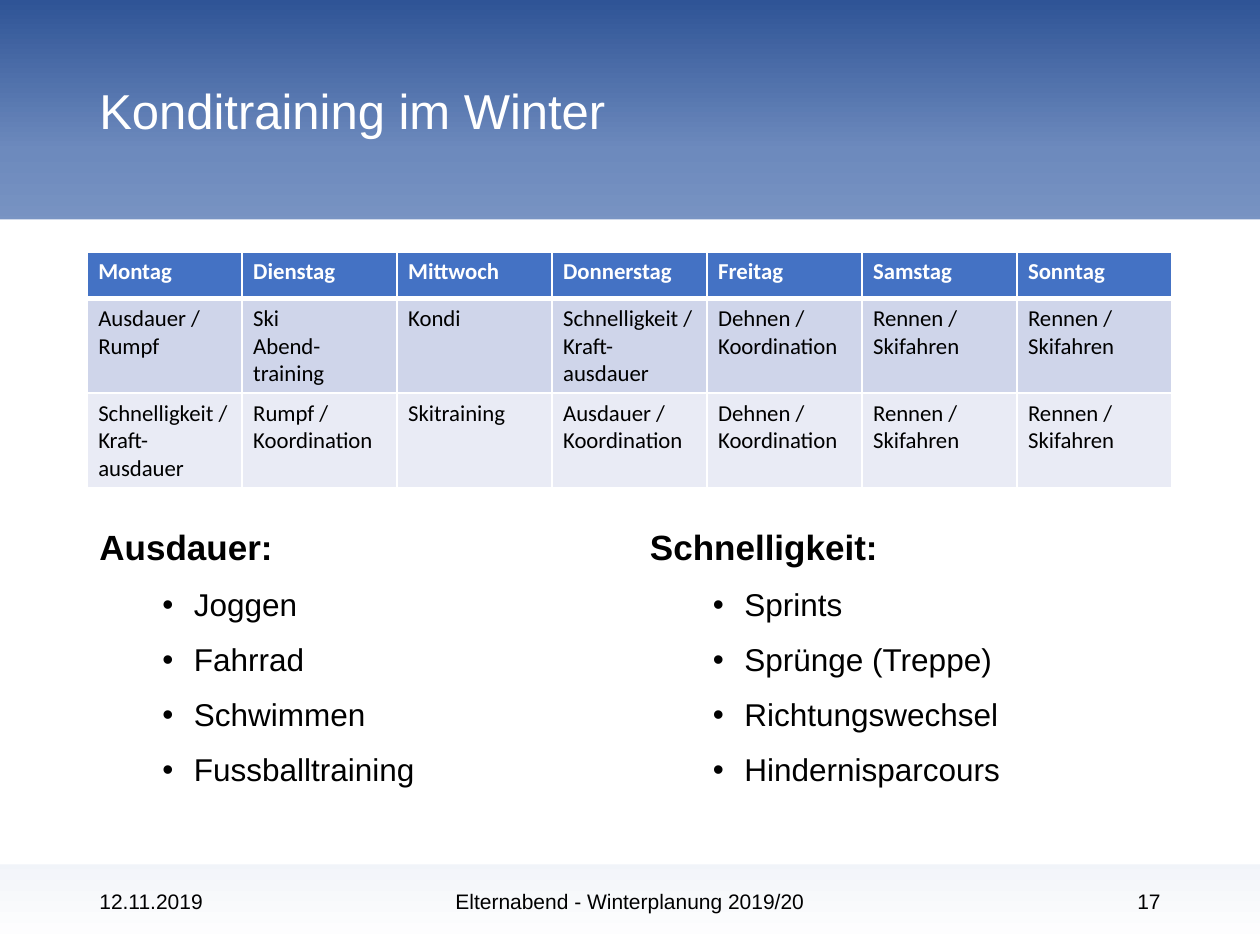
from copy import deepcopy
from lxml import etree
from pptx import Presentation
from pptx import util as u
from pptx.dml import color
from pptx.enum import shapes, text
from pptx.oxml import ns


def rgb(value):
    return color.RGBColor.from_string(value)


def add_run(paragraph, words, size, ink="000000", bold=False, face="Arial"):
    run = paragraph.add_run()
    run.text = words
    run.font.size = u.Pt(size)
    run.font.name = face
    run.font.bold = bold
    run.font.color.rgb = rgb(ink)


presentation = Presentation()
presentation.slide_width = u.Inches(10)
presentation.slide_height = u.Inches(7.5)
slide = presentation.slides.add_slide(presentation.slide_layouts[6])

# Background gradient with three stops, dark at the top
fill = slide.background.fill
fill.gradient()
fill.gradient_angle = 270
stop_list = slide.element.find(".//" + ns.qn("a:gsLst"))
stop_list.insert(1, deepcopy(stop_list[0]))
stops = [(0, "2F5496"), (0.16, "6D8ABD"), (1, "FFFFFF")]
for stop, (position, tint) in zip(fill.gradient_stops, stops):
    stop.position = position
    stop.color.rgb = rgb(tint)

# White content panel
panel = slide.shapes.add_shape(
    shapes.MSO_SHAPE.RECTANGLE, 0, u.Inches(1.74), u.Inches(10), u.Inches(5.12))
panel.shadow.inherit = False
panel.fill.solid()
panel.fill.fore_color.rgb = rgb("FFFFFF")
panel.line.fill.background()

# Title and footer
LEFT, CENTER, RIGHT = text.PP_ALIGN.LEFT, text.PP_ALIGN.CENTER, text.PP_ALIGN.RIGHT
single_lines = [
    ("Konditraining im Winter", 0.69, 0.15, 6.5, 1.45, 28, "FFFFFF", LEFT),
    ("12.11.2019", 0.69, 6.95, 2.25, 0.4, 12, "000000", LEFT),
    ("Elternabend - Winterplanung 2019/20", 3.31, 6.95, 3.38, 0.4, 12, "000000", CENTER),
    ("17", 7.06, 6.95, 2.25, 0.4, 12, "000000", RIGHT),
]
for words, left, top, width, height, size, ink, alignment in single_lines:
    box = slide.shapes.add_textbox(
        u.Inches(left), u.Inches(top), u.Inches(width), u.Inches(height))
    box.text_frame.word_wrap = True
    box.text_frame.vertical_anchor = text.MSO_ANCHOR.MIDDLE
    paragraph = box.text_frame.paragraphs[0]
    paragraph.alignment = alignment
    add_run(paragraph, words, size, ink)

# Weekly training table
week = [
    ["Montag", "Dienstag", "Mittwoch", "Donnerstag", "Freitag", "Samstag", "Sonntag"],
    ["Ausdauer / Rumpf", "Ski\nAbend-training", "Kondi", "Schnelligkeit / Kraft-ausdauer",
     "Dehnen / Koordination", "Rennen / Skifahren", "Rennen / Skifahren"],
    ["Schnelligkeit / Kraft-ausdauer", "Rumpf / Koordination", "Skitraining",
     "Ausdauer / Koordination", "Dehnen / Koordination", "Rennen / Skifahren",
     "Rennen / Skifahren"],
]
row_heights = [0.37, 0.74, 0.74]
row_fills = ["4472C4", "CFD5EA", "E9EBF5"]
table = slide.shapes.add_table(
    3, 7, u.Inches(0.69), u.Inches(2), u.Inches(8.61), u.Inches(sum(row_heights))).table
for column in table.columns:
    column.width = u.Inches(1.23)
for row_index, entries in enumerate(week):
    header = row_index == 0
    table.rows[row_index].height = u.Inches(row_heights[row_index])
    for column_index, entry in enumerate(entries):
        cell = table.cell(row_index, column_index)
        cell.margin_left = cell.margin_right = u.Inches(0.09)
        cell.margin_top = cell.margin_bottom = u.Inches(0.05)
        for index, words in enumerate(entry.split("\n")):
            frame = cell.text_frame
            paragraph = frame.add_paragraph() if index else frame.paragraphs[0]
            add_run(paragraph, words, 13, "FFFFFF" if header else "000000", header, "Calibri")
        # White borders, thicker between header and body; they precede the fill
        properties = cell._tc.get_or_add_tcPr()
        thick_side = {0: "lnB", 1: "lnT"}.get(row_index)
        for side in ("lnL", "lnR", "lnT", "lnB"):
            border = etree.SubElement(properties, ns.qn("a:" + side))
            border.set("w", str(u.Pt(3 if side == thick_side else 1)))
            border_fill = etree.SubElement(border, ns.qn("a:solidFill"))
            etree.SubElement(border_fill, ns.qn("a:srgbClr")).set("val", "FFFFFF")
        cell.fill.solid()
        cell.fill.fore_color.rgb = rgb(row_fills[row_index])

# Exercise lists
exercise_lists = [
    (0.69, "Ausdauer:", ["Joggen", "Fahrrad", "Schwimmen", "Fussballtraining"]),
    (5.06, "Schnelligkeit:",
     ["Sprints", "Sprünge (Treppe)", "Richtungswechsel", "Hindernisparcours"]),
]
for left, heading, exercises in exercise_lists:
    box = slide.shapes.add_textbox(
        u.Inches(left), u.Inches(4.16), u.Inches(4.25), u.Inches(2.59))
    frame = box.text_frame
    frame.word_wrap = True
    add_run(frame.paragraphs[0], heading, 20, bold=True)
    for exercise in exercises:
        paragraph = frame.add_paragraph()
        paragraph.level = 1
        properties = paragraph._p.get_or_add_pPr()
        properties.set("marL", str(u.Inches(0.75)))
        properties.set("indent", str(u.Inches(-0.25)))
        etree.SubElement(properties, ns.qn("a:buFont")).set("typeface", "Arial")
        etree.SubElement(properties, ns.qn("a:buChar")).set("char", "•")
        add_run(paragraph, exercise, 18)
    for paragraph in frame.paragraphs:
        paragraph.line_spacing = 0.9
        paragraph.space_after = u.Pt(12)

presentation.save("out.pptx")
